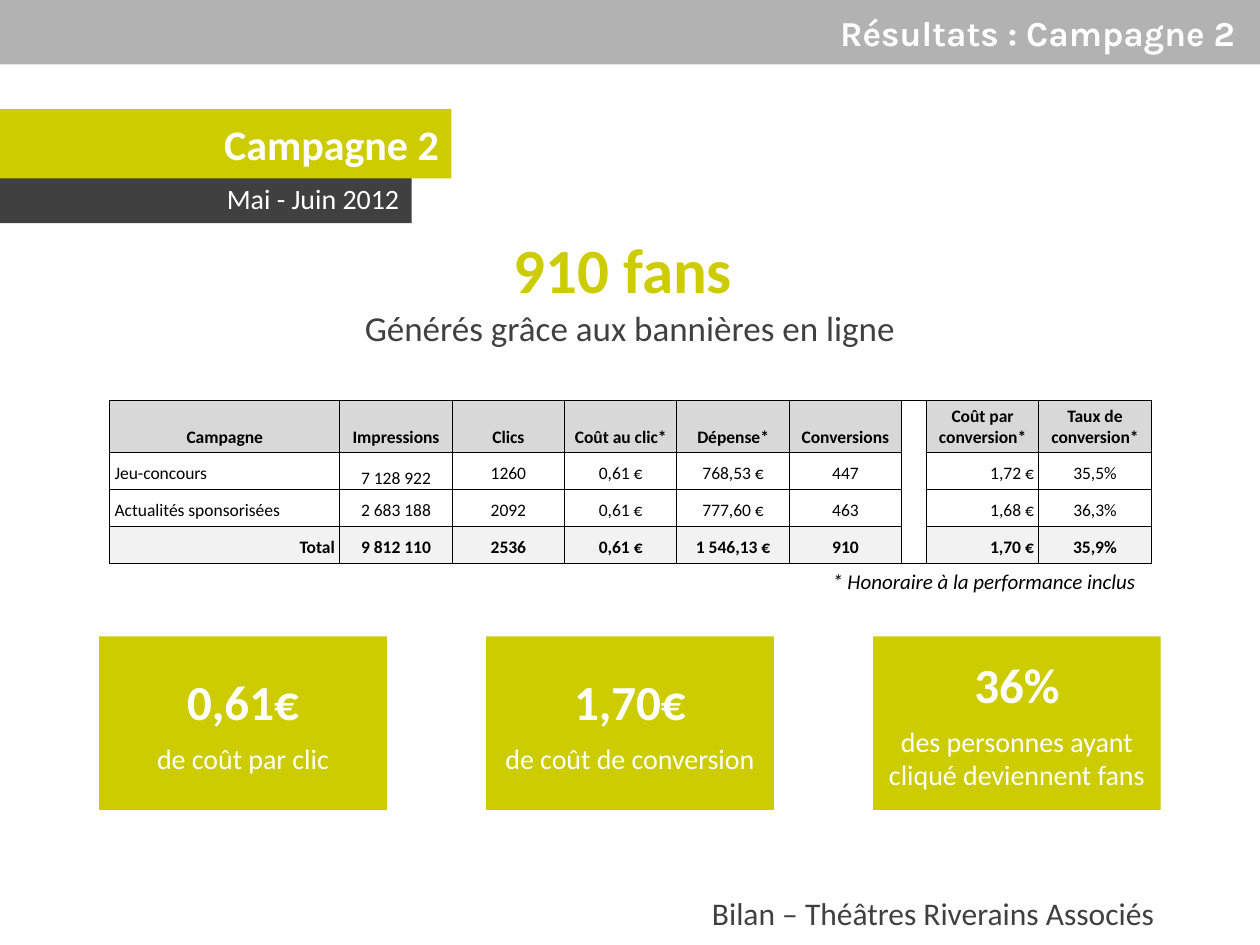
"""Build the results slide of the second campaign."""
import dataclasses

import lxml.etree
import pptx
import pptx.dml.color
import pptx.enum.shapes
import pptx.enum.text
import pptx.oxml.ns
import pptx.util

Cm = pptx.util.Cm
Align = pptx.enum.text.PP_ALIGN
Anchor = pptx.enum.text.MSO_ANCHOR
qn = pptx.oxml.ns.qn


@dataclasses.dataclass(frozen=True)
class Theme:
    """Hold the colours, fonts and type sizes."""
    lime: str = "CCCC00"
    dark: str = "404040"
    grey: str = "B2B2B2"
    head: str = "D8D8D8"
    total: str = "F2F2F2"
    white: str = "FFFFFF"
    black: str = "000000"
    body: str = "Calibri"
    title: str = "Karla"
    huge: int = 36
    big: int = 28
    large: int = 24
    lead: int = 20
    foot: int = 18
    small: int = 16
    note: int = 12
    cell: int = 10


THEME = Theme()

HEADS = ["Campagne", "Impressions", "Clics", "Coût au clic*", "Dépense*",
         "Conversions", "", "Coût par conversion*", "Taux de conversion*"]
ROWS = [
    HEADS,
    ["Jeu-concours", "7 128 922", "1260", "0,61 €", "768,53 €", "447",
     "", "1,72 €", "35,5%"],
    ["Actualités sponsorisées", "2 683 188", "2092", "0,61 €", "777,60 €",
     "463", "", "1,68 €", "36,3%"],
    ["Total", "9 812 110", "2536", "0,61 €", "1 546,13 €", "910",
     "", "1,70 €", "35,9%"],
]
GAP, COST = 6, 7
CARDS = [("0,61€", "de coût par clic"),
         ("1,70€", "de coût de conversion"),
         ("36%", "des personnes ayant cliqué deviennent fans")]


def paint(fill, tone):
    """Fill with one solid colour."""
    fill.solid()
    fill.fore_color.rgb = pptx.dml.color.RGBColor.from_string(tone)


def style(par, size, tone, bold=False, slant=False, face=THEME.body):
    """Format each run of a paragraph."""
    for run in par.runs:
        font = run.font
        font.name, font.size = face, pptx.util.Pt(size)
        font.bold, font.italic = bold, slant
        font.color.rgb = pptx.dml.color.RGBColor.from_string(tone)


def write(frame, lines, align, looks, after=0):
    """Set the lines of a frame, each with its own look."""
    frame.text = "\n".join(lines)
    for par, look in zip(frame.paragraphs, looks):
        par.alignment = align
        par.space_after = pptx.util.Pt(after)
        style(par, *look)


def add_block(slide, spot, tone):
    """Add a filled rectangle and return its text frame."""
    kind = pptx.enum.shapes.MSO_SHAPE.RECTANGLE
    shape = slide.shapes.add_shape(kind, *map(Cm, spot))
    shape.shadow.inherit = False
    shape.line.fill.background()
    paint(shape.fill, tone)
    frame = shape.text_frame
    frame.word_wrap = True
    frame.vertical_anchor = Anchor.MIDDLE
    return frame


def add_label(slide, spot, wrap=True, anchor=Anchor.TOP):
    """Add a plain text box and return its frame."""
    frame = slide.shapes.add_textbox(*map(Cm, spot)).text_frame
    frame.word_wrap = wrap
    frame.vertical_anchor = anchor
    return frame


def add_card(slide, left, lines):
    """Add one key figure with its caption."""
    frame = add_block(slide, (left, 12.83, 5.8, 3.5), THEME.lime)
    frame.margin_left = frame.margin_right = Cm(0.2)
    frame.margin_top = frame.margin_bottom = Cm(0.2)
    looks = [(THEME.big, THEME.white, True), (THEME.small, THEME.white)]
    write(frame, lines, Align.CENTER, looks, 6)


def rule(cell, sides):
    """Draw thin borders on the given sides of a cell."""
    props = cell._tc.get_or_add_tcPr()
    for side in "LRTB":
        line = lxml.etree.SubElement(props, qn(f"a:ln{side}"), w="6350")
        if side in sides:
            fill = lxml.etree.SubElement(line, qn("a:solidFill"))
            lxml.etree.SubElement(fill, qn("a:srgbClr"), val=THEME.black)
        else:
            lxml.etree.SubElement(line, qn("a:noFill"))


def fill_cell(cell, text, row, col):
    """Set the text, borders and fill of one table cell."""
    last = len(ROWS) - 1
    sides = "LRTB"
    tone = {0: THEME.head, last: THEME.total}.get(row, THEME.white)
    if col == GAP:
        sides = "LR" + {0: "T", last: "B"}.get(row, "")
        tone = THEME.white
    rule(cell, sides)
    paint(cell.fill, tone)
    cell.vertical_anchor = Anchor.BOTTOM
    cell.margin_left = cell.margin_right = Cm(0.1)
    cell.margin_top = cell.margin_bottom = Cm(0.1)
    if (row, col) == (1, 1):
        cell.margin_bottom = 0
    align = Align.CENTER
    if col == 0 and 0 < row < last:
        align = Align.LEFT
    elif (col == 0 and row == last) or (col == COST and row > 0):
        align = Align.RIGHT
    look = (THEME.cell, THEME.black, row in (0, last))
    write(cell.text_frame, [text], align, [look])
    if not text:
        par = cell.text_frame.paragraphs[0]._p
        lxml.etree.SubElement(par, qn("a:endParaRPr"),
                              sz=str(THEME.cell * 100))


def add_grid(slide):
    """Add the table of campaign results."""
    spot = map(Cm, (2.21, 8.08, 21, 3.25))
    table = slide.shapes.add_table(len(ROWS), len(HEADS), *spot).table
    table.first_row = table.horz_banding = False
    for col, item in enumerate(table.columns):
        item.width = Cm({0: 4.64, GAP: 0.5}.get(col, 2.265))
    for row, item in enumerate(table.rows):
        item.height = Cm(0.74 if row else 1.04)
    for row, texts in enumerate(ROWS):
        for col, text in enumerate(texts):
            fill_cell(table.cell(row, col), text, row, col)


def main():
    """Build and save the slide."""
    deck = pptx.Presentation()
    deck.slide_width, deck.slide_height = Cm(25.4), Cm(19.05)
    slide = deck.slides.add_slide(deck.slide_layouts[6])

    frame = add_block(slide, (0, 0, 25.4, 1.3), THEME.grey)
    frame.margin_right = Cm(0.5)
    look = (THEME.lead, THEME.white, True, False, THEME.title)
    write(frame, ["Résultats : Campagne 2"], Align.RIGHT, [look])

    frame = add_block(slide, (0, 3.5, 8.3, 1), THEME.dark)
    write(frame, ["Mai - Juin 2012"], Align.RIGHT,
          [(THEME.small, THEME.white)])
    frame = add_block(slide, (0, 2.2, 9.1, 1.4), THEME.lime)
    write(frame, ["Campagne 2"], Align.RIGHT,
          [(THEME.large, THEME.white, True)])

    frame = add_label(slide, (2.6, 4.53, 20.2, 2.8))
    write(frame, ["910 fans ", "Générés grâce aux bannières en ligne"],
          Align.CENTER, [(THEME.huge, THEME.lime, True),
                         (THEME.lead, THEME.dark)])

    add_grid(slide)
    frame = add_label(slide, (16.53, 11.33, 6.68, 0.77), False)
    write(frame, ["* Honoraire à la performance inclus"], Align.LEFT,
          [(THEME.note, THEME.black, False, True)])

    for index, lines in enumerate(CARDS):
        add_card(slide, 2 + 7.8 * index, lines)

    frame = add_label(slide, (8.7, 17.75, 14.82, 1.3),
                      anchor=Anchor.MIDDLE)
    write(frame, ["Bilan – Théâtres Riverains Associés"], Align.RIGHT,
          [(THEME.foot, THEME.dark)])
    deck.save("out.pptx")


if __name__ == "__main__":
    main()
